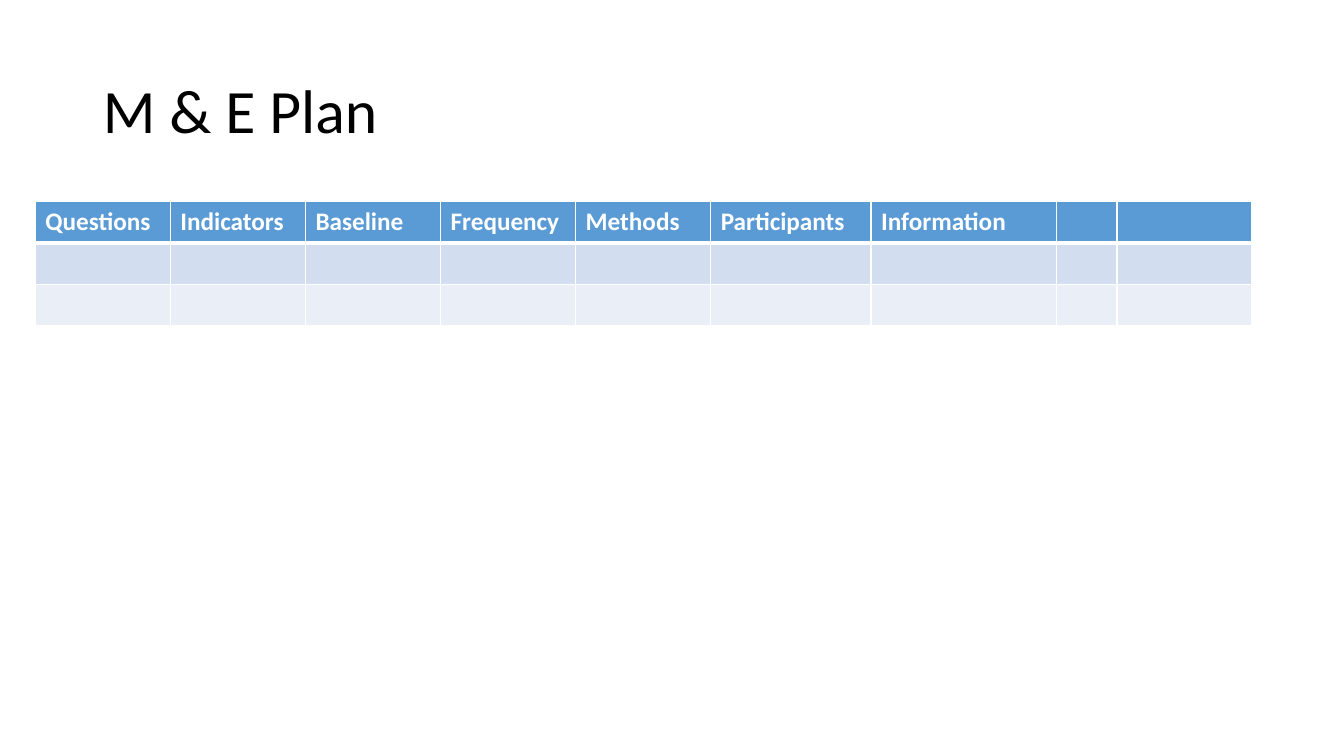
from pptx import Presentation
from pptx.dml.color import RGBColor as RGB
from pptx.enum.text import MSO_ANCHOR as Anchor, PP_ALIGN as Align
from pptx.oxml import parse_xml
from pptx.oxml.ns import nsdecls
from pptx.util import Inches, Pt

HUES = {"text": "000000", "white": "FFFFFF", "head": "5B9BD5",
        "band": "D2DEEF", "pale": "EAEFF7"}
FONT = "Calibri"
HEADS = ["Questions", "Indicators", "Baseline", "Frequency", "Methods",
         "Participants", "Information", "", ""]
WIDTHS = [1.34] * 5 + [1.59, 1.84, 0.6, 1.34]
FILLS = ["head", "band", "pale"]
HIGH = 0.41


def style(font, size, hue, bold):
    look = {"name": FONT, "size": Pt(size), "bold": bold}
    for key, value in look.items():
        setattr(font, key, value)
    font.color.rgb = RGB.from_string(HUES[hue])


def edge(cell, side, width):
    """Draw one white cell border; side is L, R, T or B."""
    cell._tc.get_or_add_tcPr().append(parse_xml(
        f'<a:ln{side} {nsdecls("a")} w="{Pt(width)}"><a:solidFill>'
        f'<a:srgbClr val="{HUES["white"]}"/></a:solidFill></a:ln{side}>'))


deck = Presentation()
deck.slide_width, deck.slide_height = Inches(13.33), Inches(7.5)
slide = deck.slides.add_slide(deck.slide_layouts[5])

title = slide.shapes.title
title.left, title.top = Inches(0.92), Inches(0.4)
title.width, title.height = Inches(11.5), Inches(1.45)
title.text_frame.text = "M & E Plan"
title.text_frame.vertical_anchor = Anchor.MIDDLE
line = title.text_frame.paragraphs[0]
line.alignment = Align.LEFT
line.line_spacing = 0.9
style(line.runs[0].font, 44, "text", False)

table = slide.shapes.add_table(
    len(FILLS), len(HEADS), Inches(0.35), Inches(2),
    Inches(sum(WIDTHS)), Inches(HIGH * len(FILLS))).table
for col, width in zip(table.columns, WIDTHS):
    col.width = Inches(width)

for r, fill in enumerate(FILLS):
    table.rows[r].height = Inches(HIGH)
    for c, head in enumerate(HEADS):
        cell = table.cell(r, c)
        # The rule below the header row is thicker than the rest.
        sides = {"L": 1, "R": 1, "T": 3 if r == 1 else 1, "B": 3 if r == 0 else 1}
        for side, width in sides.items():
            edge(cell, side, width)
        cell.fill.solid()
        cell.fill.fore_color.rgb = RGB.from_string(HUES[fill])
        if r == 0 and head:
            cell.text = head
            style(cell.text_frame.paragraphs[0].runs[0].font, 18, "white", True)

deck.save("out.pptx")
